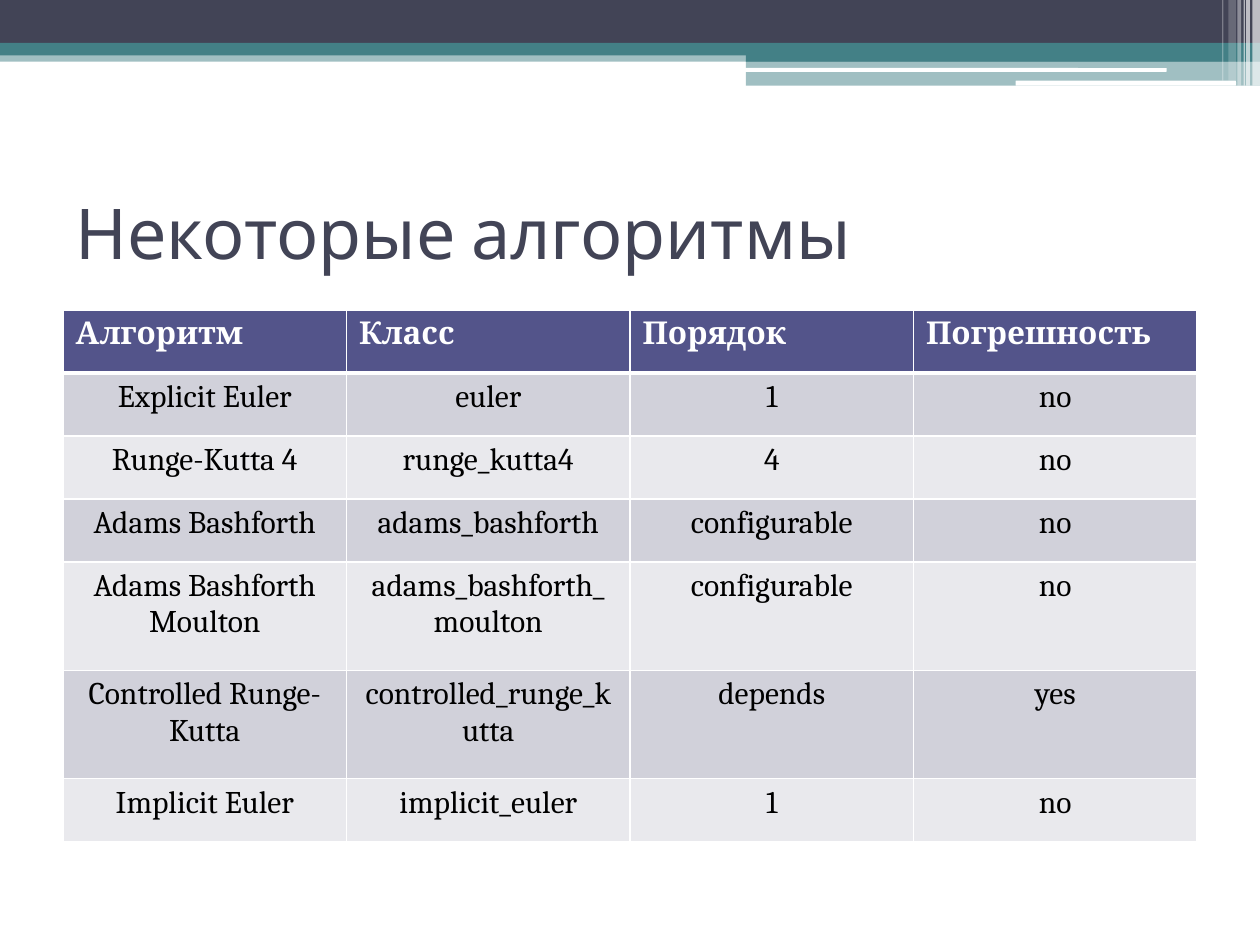
import pptx
import pptx.util
import pptx.oxml
from lxml import etree
from pptx.dml.color import RGBColor
from pptx.enum.shapes import MSO_SHAPE
from pptx.enum.text import MSO_ANCHOR, MSO_AUTO_SIZE, PP_ALIGN
from pptx.oxml.ns import qn
from pptx.util import Inches, Pt

WHITE = RGBColor(0xFF, 0xFF, 0xFF)
BLACK = RGBColor(0, 0, 0)
SLATE = RGBColor(0x42, 0x44, 0x56)
TEAL = RGBColor(0x43, 0x80, 0x86)
INDIGO = RGBColor(0x53, 0x54, 0x8A)
BANDS = [RGBColor(0xD1, 0xD1, 0xDA), RGBColor(0xE9, 0xE9, 0xED)]

TITLE = "Некоторые алгоритмы"
ROWS = [
    ("Алгоритм", "Класс", "Порядок", "Погрешность"),
    ("Explicit Euler", "euler", "1", "no"),
    ("Runge-Kutta 4", "runge_kutta4", "4", "no"),
    ("Adams Bashforth", "adams_bashforth", "configurable", "no"),
    ("Adams Bashforth Moulton", "adams_bashforth_moulton", "configurable", "no"),
    ("Controlled Runge-Kutta", "controlled_runge_kutta", "depends", "yes"),
    ("Implicit Euler", "implicit_euler", "1", "no"),
]
ROW_HEIGHTS = [0.5, 0.5, 0.5, 0.5, 0.86, 0.86, 0.5]
COLUMN_WIDTH = 2.25

# Header bands: left, top, width, height, colour, opacity in percent
BARS = [
    (0, 0.4, 10, 0.09, TEAL, 50),
    (0, 0, 10, 0.34, SLATE, 100),
    (0, 0.34, 10, 0.1, TEAL, 100),
    (5.92, 0.39, 4.08, 0.1, TEAL, 100),
    (5.92, 0.48, 4.08, 0.2, TEAL, 50),
]
ROUNDED_BARS = [
    (5.91, 0.54, 3.35, 0.03, WHITE, 100),
    (8.06, 0.64, 1.75, 0.04, WHITE, 100),
]
# Stripes at the right edge: left, width, height, opacity in percent
STRIPES = [
    (9.94, 0.06, 0.68, 65),
    (9.89, 0.03, 0.68, 65),
    (9.87, 0.01, 0.68, 60),
    (9.82, 0.03, 0.68, 40),
    (9.75, 0.06, 0.64, 20),
    (9.7, 0.01, 0.64, 30),
]


def add_bar(page, kind, left, top, width, height, colour, opacity):
    bar = page.shapes.add_shape(
        kind, Inches(left), Inches(top), Inches(width), Inches(height))
    bar.shadow.inherit = False
    bar.line.fill.background()
    bar.fill.solid()
    bar.fill.fore_color.rgb = colour
    if opacity < 100:
        tint = bar._element.spPr.find(qn("a:solidFill"))[0]
        etree.SubElement(tint, qn("a:alpha"), val=str(opacity * 1000))


def add_borders(cell, bottom_width):
    properties = cell._tc.get_or_add_tcPr()
    for side, width in zip("LRTB", (1, 1, 1, bottom_width)):
        line = etree.SubElement(properties, qn("a:ln" + side), w=str(Pt(width)))
        fill = etree.SubElement(line, qn("a:solidFill"))
        etree.SubElement(fill, qn("a:srgbClr"), val=str(WHITE))


deck = pptx.Presentation()
deck.slide_width, deck.slide_height = Inches(10), Inches(7.5)
page = deck.slides.add_slide(deck.slide_layouts[5])

# Header decoration
for bar in BARS:
    add_bar(page, MSO_SHAPE.RECTANGLE, *bar)
for bar in ROUNDED_BARS:
    add_bar(page, MSO_SHAPE.ROUNDED_RECTANGLE, *bar)
for left, width, height, opacity in STRIPES:
    add_bar(page, MSO_SHAPE.RECTANGLE, left, 0, width, height, WHITE, opacity)

# Title
title = page.shapes.title
title.left, title.top = Inches(0.5), Inches(1.25)
title.width, title.height = Inches(9), Inches(1.17)
frame = title.text_frame
frame.text = TITLE
frame.auto_size = MSO_AUTO_SIZE.NONE
frame.vertical_anchor = MSO_ANCHOR.MIDDLE
para = frame.paragraphs[0]
para.alignment = PP_ALIGN.LEFT
para.font.name, para.font.size = "Cabin", Pt(40)
para.font.color.rgb = SLATE

# Table of algorithms
table = page.shapes.add_table(
    len(ROWS), len(ROWS[0]), Inches(0.5), Inches(2.46),
    Inches(COLUMN_WIDTH * len(ROWS[0])), Inches(sum(ROW_HEIGHTS))).table
for column in table.columns:
    column.width = Inches(COLUMN_WIDTH)
for number, (texts, height) in enumerate(zip(ROWS, ROW_HEIGHTS)):
    header = number == 0
    table.rows[number].height = Inches(height)
    for cell, text in zip(table.rows[number].cells, texts):
        add_borders(cell, 3 if number == 0 else 1)
        cell.fill.solid()
        cell.fill.fore_color.rgb = INDIGO if header else BANDS[(number - 1) % 2]
        cell.text = text
        para = cell.text_frame.paragraphs[0]
        para.alignment = PP_ALIGN.LEFT if header else PP_ALIGN.CENTER
        para.font.name, para.font.size = "Cambria", Pt(18)
        para.font.bold = header
        para.font.color.rgb = WHITE if header else BLACK

deck.save("out.pptx")
